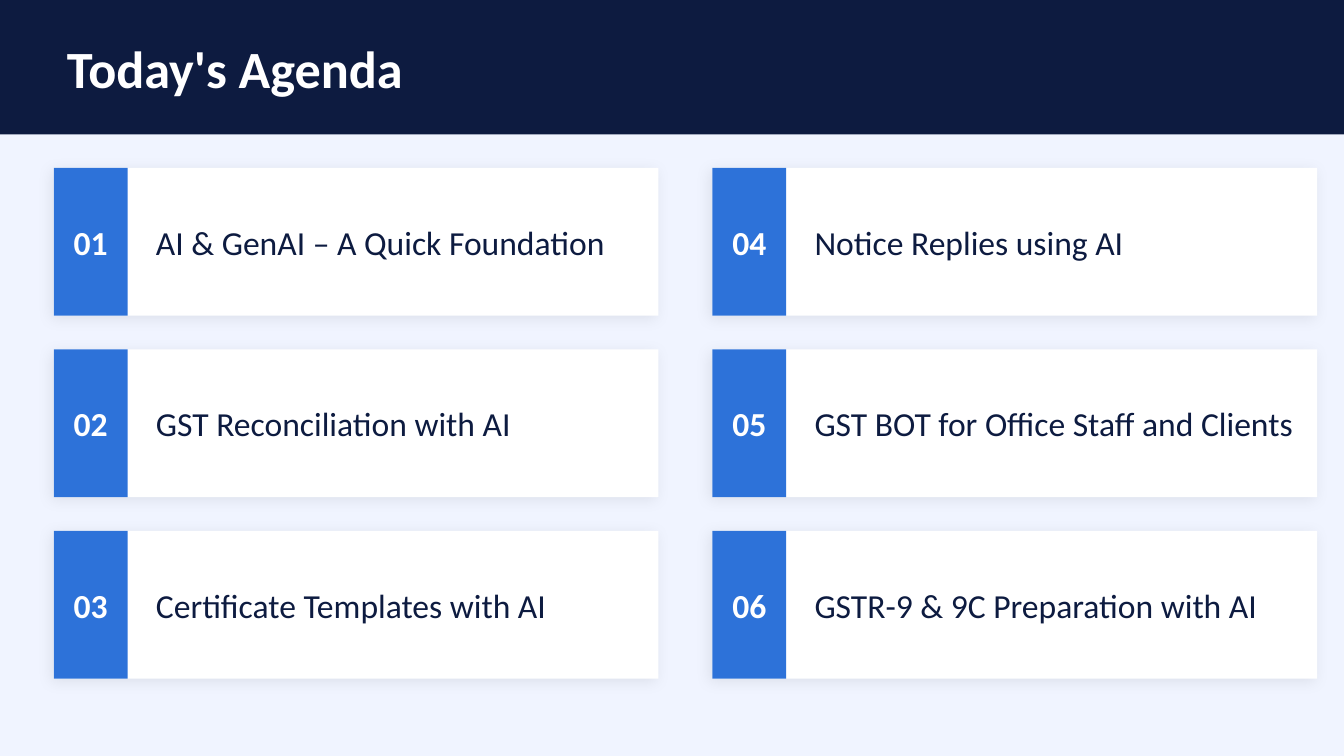
from lxml import etree
from pptx import Presentation
from pptx.dml.color import RGBColor
from pptx.enum import shapes, text
from pptx.oxml.ns import qn
from pptx.util import Pt

# Content
TITLE = "Today's Agenda"
AGENDA = [
    "AI & GenAI – A Quick Foundation",
    "GST Reconciliation with AI",
    "Certificate Templates with AI",
    "Notice Replies using AI",
    "GST BOT for Office Staff and Clients",
    "GSTR-9 & 9C Preparation with AI",
]

# Style and layout, in points
NAVY = RGBColor(0x0D, 0x1B, 0x40)
BLUE = RGBColor(0x2D, 0x72, 0xD9)
PALE = RGBColor(0xF0, 0xF4, 0xFF)
WHITE = RGBColor(0xFF, 0xFF, 0xFF)
FONT = "Calibri"
SLIDE_W, SLIDE_H = 720, 405
HEADER_H = 72
ROWS = 3
LEFT, TOP = 28.8, 90
CARD_W, CARD_H = 324, 79.2
COL_STEP, ROW_STEP = 352.8, 97.2
BADGE_W = 39.6
LABEL_DX, LABEL_W = 46.8, 273.6


def add_rect(s, x, y, w, h, fill):
    sp = s.shapes.add_shape(shapes.MSO_SHAPE.RECTANGLE, Pt(x), Pt(y), Pt(w), Pt(h))
    sp.fill.solid()
    sp.fill.fore_color.rgb = fill
    sp.line.fill.background()
    sp.shadow.inherit = False
    return sp


def add_soft_shadow(sp):
    effects = sp._element.spPr.find(qn("a:effectLst"))
    shadow = etree.SubElement(effects, qn("a:outerShdw"), blurRad=str(Pt(8)),
                              dist=str(Pt(2)), dir=str(135 * 60000),
                              algn="bl", rotWithShape="0")
    color = etree.SubElement(shadow, qn("a:srgbClr"), val="000000")
    etree.SubElement(color, qn("a:alpha"), val="8000")


def set_text(sp, words, size, color, bold=False, align=text.PP_ALIGN.LEFT, inset=None):
    tf = sp.text_frame
    tf.word_wrap = True
    tf.vertical_anchor = text.MSO_ANCHOR.MIDDLE
    if inset is not None:
        tf.margin_left = tf.margin_top = tf.margin_right = tf.margin_bottom = Pt(inset)
    p = tf.paragraphs[0]
    p.text = words
    p.alignment = align
    p.font.name = FONT
    p.font.size = Pt(size)
    p.font.bold = bold
    p.font.color.rgb = color


def add_card(s, x, y, number, label):
    add_soft_shadow(add_rect(s, x, y, CARD_W, CARD_H, WHITE))
    badge = add_rect(s, x, y, BADGE_W, CARD_H, BLUE)
    set_text(badge, f"{number:02d}", 18, WHITE, True, text.PP_ALIGN.CENTER, inset=0)
    box = s.shapes.add_textbox(Pt(x + LABEL_DX), Pt(y), Pt(LABEL_W), Pt(CARD_H))
    set_text(box, label, 18, NAVY, inset=8)


prs = Presentation()
prs.slide_width, prs.slide_height = Pt(SLIDE_W), Pt(SLIDE_H)
s = prs.slides.add_slide(prs.slide_layouts[6])
s.background.fill.solid()
s.background.fill.fore_color.rgb = PALE

# Header band and title
add_rect(s, 0, 0, SLIDE_W, HEADER_H, NAVY)
title = s.shapes.add_textbox(Pt(LEFT), Pt(0), Pt(SLIDE_W - 2 * LEFT), Pt(HEADER_H))
set_text(title, TITLE, 28, WHITE, bold=True)

# Agenda cards, filled column by column
for i, label in enumerate(AGENDA):
    col, row = divmod(i, ROWS)
    add_card(s, LEFT + col * COL_STEP, TOP + row * ROW_STEP, i + 1, label)

prs.save("out.pptx")
